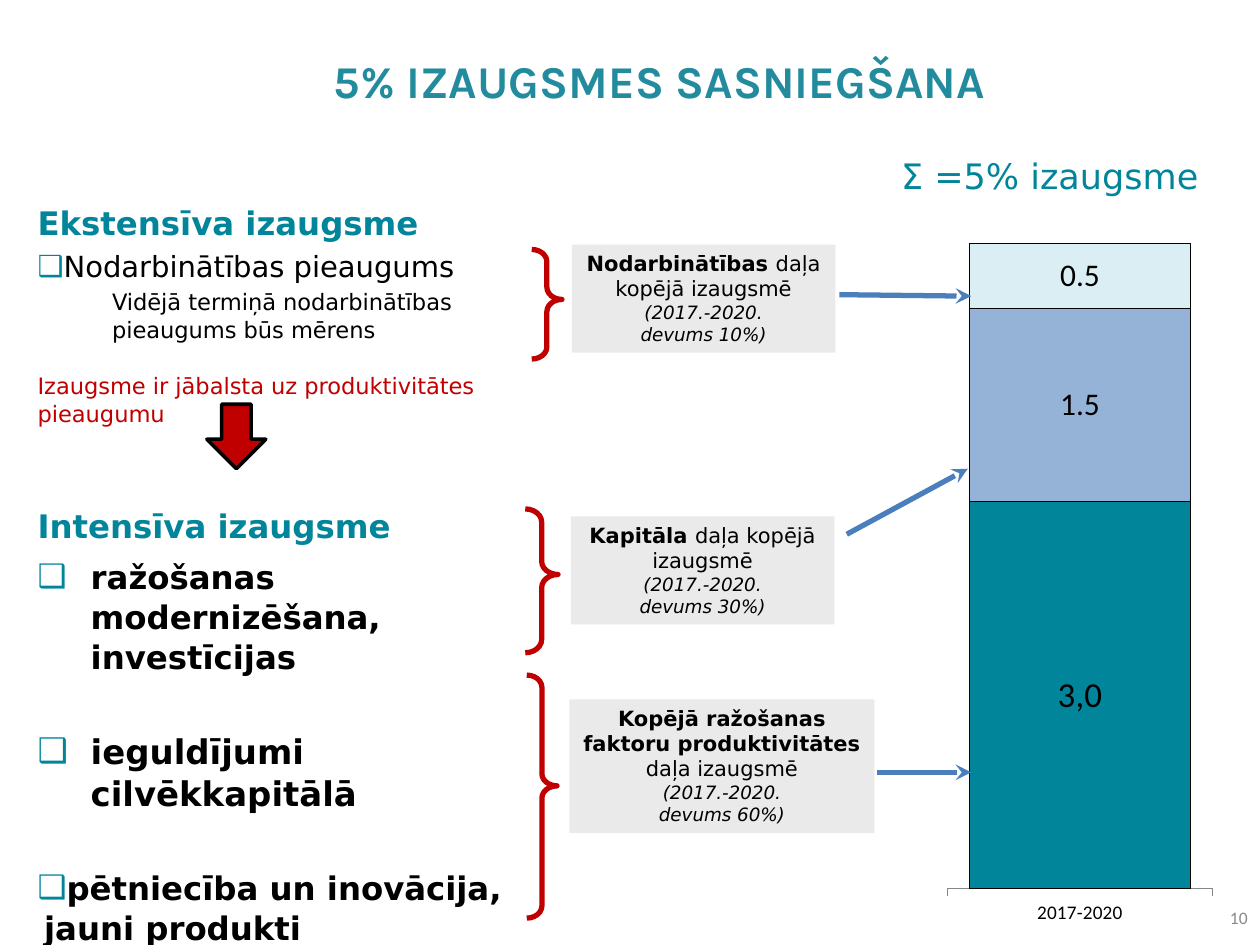
from lxml.etree import SubElement
from pptx import Presentation
from pptx.chart.data import CategoryChartData
from pptx.dml.color import RGBColor
from pptx.enum.chart import XL_CHART_TYPE, XL_LABEL_POSITION, XL_TICK_MARK
from pptx.enum.shapes import MSO_CONNECTOR, MSO_SHAPE
from pptx.enum.text import MSO_ANCHOR, PP_ALIGN
from pptx.oxml import parse_xml
from pptx.oxml.ns import nsdecls, qn
from pptx.util import Cm, Pt

TEAL, RED, BLACK, GREY = "00859B", "C00000", "000000", "EAEAEA"
SANS = "DejaVu Sans"


def color(code):
    return RGBColor.from_string(code)


def place(box):
    return [Cm(n) for n in box]


def style(font, size, code=BLACK, bold=False, italic=False, name=SANS):
    font.name, font.size = name, Pt(size)
    font.bold, font.italic = bold, italic
    font.color.rgb = color(code)


def shape(slide, kind, box, fill=None, line=None, width=1):
    item = slide.shapes.add_shape(kind, *place(box))
    item.shadow.inherit = False
    if fill:
        item.fill.solid()
        item.fill.fore_color.rgb = color(fill)
    else:
        item.fill.background()
    if line:
        item.line.color.rgb = color(line)
        item.line.width = Pt(width)
    else:
        item.line.fill.background()
    return item


def text(slide, box, words, align=PP_ALIGN.LEFT, anchor=MSO_ANCHOR.TOP, **look):
    frame = slide.shapes.add_textbox(*place(box)).text_frame
    frame.word_wrap, frame.vertical_anchor = True, anchor
    para = frame.paragraphs[0]
    para.text, para.alignment = words, align
    style(para.font, **look)


def indent(para, left, first, bullet):
    """Set left margin and first-line indent in cm, with an optional box bullet."""
    props = para._p.get_or_add_pPr()
    props.set("marL", str(Cm(left)))
    props.set("indent", str(Cm(first)))
    if bullet:
        tint = SubElement(props, qn("a:buClr"))
        SubElement(tint, qn("a:srgbClr")).set("val", TEAL)
        SubElement(props, qn("a:buFont")).set("typeface", SANS)
        SubElement(props, qn("a:buChar")).set("char", "❑")


def outline(slide, box):
    # words, size, colour, bold, space before, left, first, bullet
    items = [
        ("Ekstensīva izaugsme", 18.5, TEAL, True, 0, 0, 0, False),
        ("Nodarbinātības pieaugums", 16.6, BLACK, False, 3.5, 0, -0.81, True),
        ("Vidējā termiņā nodarbinātības pieaugums būs mērens",
         12.9, BLACK, False, 2, 1.5, 0, False),
        ("Izaugsme ir jābalsta uz produktivitātes pieaugumu",
         12.9, RED, False, 16, 0, 0, False),
        ("Intensīva izaugsme", 18.5, TEAL, True, 45, 0, 0, False),
        ("ražošanas modernizēšana, investīcijas",
         18.5, BLACK, True, 6, 1.07, -1.07, True),
        ("ieguldījumi cilvēkkapitālā", 19.4, BLACK, True, 30.5, 1.07, -1.07, True),
        ("pētniecība un inovācija, jauni produkti",
         18.5, BLACK, True, 30.5, 0.13, -0.97, True),
    ]
    frame = slide.shapes.add_textbox(*place(box)).text_frame
    frame.word_wrap = True
    for i, (words, size, code, bold, gap, left, first, bullet) in enumerate(items):
        para = frame.add_paragraph() if i else frame.paragraphs[0]
        para.text = words
        indent(para, left, first, bullet)
        para.space_before, para.line_spacing = Pt(gap), 1.03
        style(para.font, size, code, bold)
    x, y = box[:2]
    shape(slide, MSO_SHAPE.DOWN_ARROW, (x + 3.66, y + 4.21, 1.19, 1.3), RED, BLACK, 2)


def arrow(slide, ends):
    link = slide.shapes.add_connector(MSO_CONNECTOR.STRAIGHT, *place(ends))
    link.line.color.rgb = color("4B7EBC")
    link.line.width = Pt(3)
    SubElement(link.line._get_or_add_ln(), qn("a:tailEnd")).set("type", "stealth")
    SubElement(link._element.spPr, qn("a:effectLst"))


def factor(slide, box, label, ends, head, rest, share):
    """Draw a brace in box; label and arrow ends are offsets from its corner."""
    x, y = box[:2]
    brace = shape(slide, MSO_SHAPE.RIGHT_BRACE, box, line=RED, width=3)
    brace.adjustments[0], brace.adjustments[1] = 0.404, 0.456
    dx, dy, w, h = label
    frame = shape(slide, MSO_SHAPE.RECTANGLE, (x + dx, y + dy, w, h), GREY).text_frame
    frame.word_wrap, frame.vertical_anchor = True, MSO_ANCHOR.TOP
    para = frame.paragraphs[0]
    for words, bold in ((head + " ", True), (rest, False)):
        run = para.add_run()
        run.text = words
        style(run.font, 12, bold=bold)
    for words in ("(2017.-2020.", f"devums {share}%)"):
        para = frame.add_paragraph()
        para.text = words
        style(para.font, 10.5, italic=True)
    for para in frame.paragraphs:
        para.alignment = PP_ALIGN.CENTER
    x1, y1, x2, y2 = ends
    arrow(slide, (x + x1, y + y1, x + x2, y + y2))


def layout(chart, x, y, w, h):
    """Fix the inner plot area as fractions of the chart."""
    area = chart._chartSpace.chart.plotArea
    for old in area.findall(qn("c:layout")):
        area.remove(old)
    sizes = "".join(f'<c:{k} val="{v}"/>' for k, v in zip("xywh", (x, y, w, h)))
    area.insert(0, parse_xml(
        f'<c:layout {nsdecls("c")}><c:manualLayout><c:layoutTarget val="inner"/>'
        f'<c:xMode val="edge"/><c:yMode val="edge"/>{sizes}</c:manualLayout></c:layout>'))


def column(slide, box):
    parts = [(3, TEAL, 20), (1.5, "95B3D7", 18), (0.5, "DBEEF4", 18)]
    data = CategoryChartData()
    data.categories = ["2017-2020"]
    for i, (value, _, _) in enumerate(parts, 1):
        data.add_series(f"Series {i}", [value])
    chart = slide.shapes.add_chart(
        XL_CHART_TYPE.COLUMN_STACKED_100, *place(box), data).chart
    chart.has_legend = chart.has_title = False
    style(chart.font, 11, name="Calibri")
    layout(chart, 0.145, 0.017, 0.854, 0.924)
    chart.value_axis.visible = False
    chart.value_axis.has_major_gridlines = False
    axis = chart.category_axis
    axis.major_tick_mark = XL_TICK_MARK.OUTSIDE
    axis.format.line.color.rgb = color("868686")
    axis.tick_labels.font.size = Pt(11)
    plot = chart.plots[0]
    plot.gap_width, plot.overlap, plot.vary_by_categories = 20, 100, False
    for series, (_, code, size) in zip(plot.series, parts):
        look = series.format
        look.fill.solid()
        look.fill.fore_color.rgb = color(code)
        look.line.color.rgb = color(BLACK)
        look.line.width = Pt(0.25)
        labels = series.data_labels
        labels.show_value = True
        labels.number_format, labels.number_format_is_linked = "0.0", False
        labels.position = XL_LABEL_POSITION.CENTER
        style(labels.font, size, name="Calibri")
    para = plot.series[0].points[0].data_label.text_frame.paragraphs[0]
    run = para.add_run()
    run.text = "3,0"
    style(run.font, 20, name="Calibri")


def main():
    deck = Presentation()
    deck.slide_width, deck.slide_height = Cm(25.4), Cm(19.05)
    slide = deck.slides.add_slide(deck.slide_layouts[6])
    text(slide, (6.48, 0.94, 17.98, 2.87), "5% IZAUGSMES SASNIEGŠANA",
         size=26, code="228B9D", bold=True, name="Karla")
    outline(slide, (0.51, 3.94, 11.1, 14.2))
    column(slide, (18.19, 4.67, 6.27, 14.07))
    text(slide, (17.75, 3, 6.83, 1.12), "Σ =5% izaugsme",
         PP_ALIGN.CENTER, size=20, code=TEAL)
    factor(slide, (10.72, 5.03, 0.61, 2.21), (0.81, -0.1, 5.31, 2.18),
           (6.2, 0.91, 8.86, 0.94), "Nodarbinātības", "daļa kopējā izaugsmē", 10)
    factor(slide, (10.59, 10.26, 0.66, 2.9), (0.92, 0.15, 5.31, 2.18),
           (6.48, 0.51, 8.92, -0.81), "Kapitāla", "daļa kopējā izaugsmē", 30)
    factor(slide, (10.62, 13.61, 0.61, 4.9), (0.86, 0.49, 6.15, 2.69),
           (7.06, 1.96, 8.96, 1.96),
           "Kopējā ražošanas faktoru produktivitātes", "daļa izaugsmē", 60)
    text(slide, (24.13, 18.08, 1.27, 0.84), "10", PP_ALIGN.RIGHT, MSO_ANCHOR.MIDDLE,
         size=10, code="898989", name="Calibri")
    deck.save("out.pptx")


if __name__ == "__main__":
    main()
